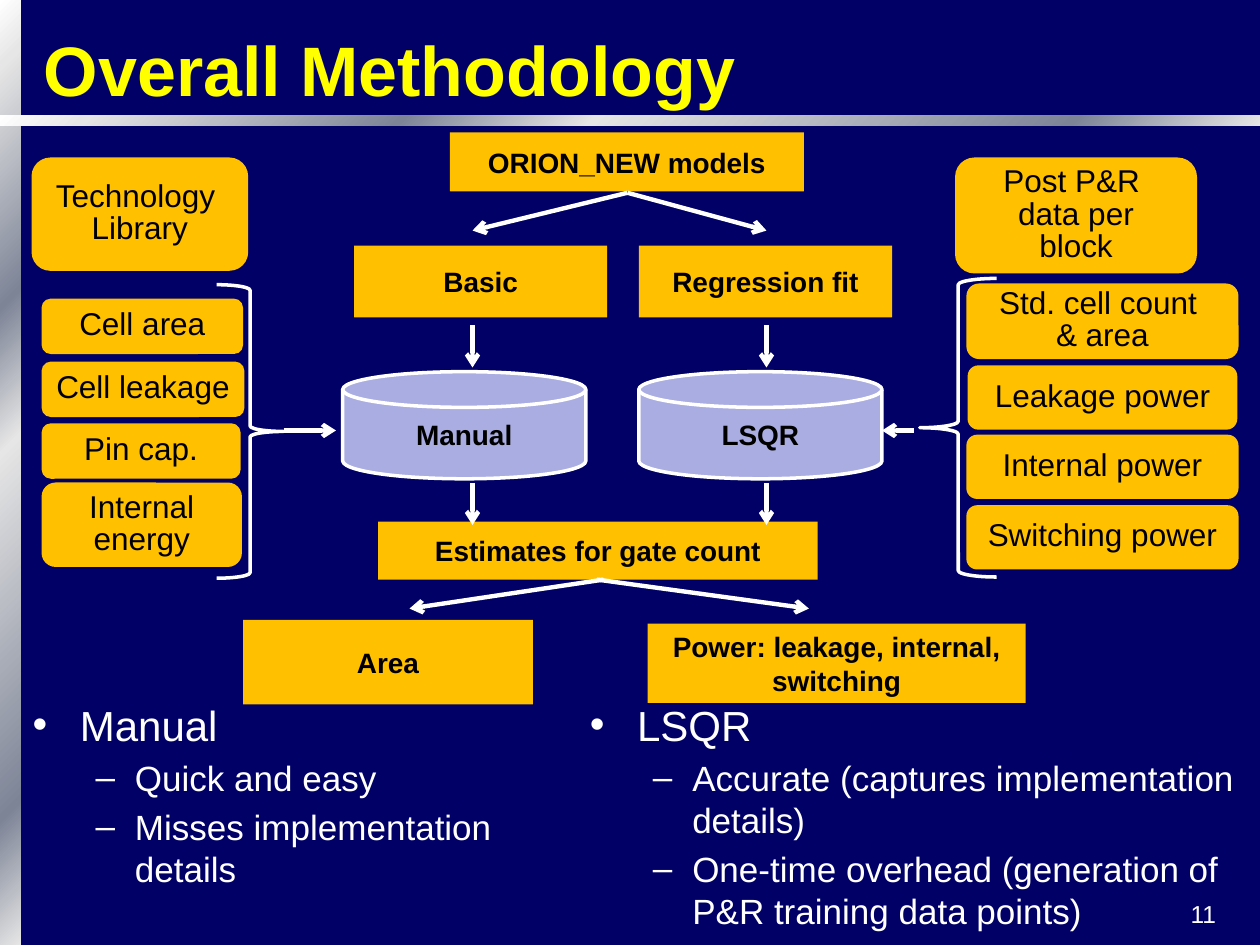
from dataclasses import dataclass

from lxml import etree
from pptx import Presentation
from pptx.dml.color import RGBColor
from pptx.enum.shapes import MSO_CONNECTOR, MSO_SHAPE
from pptx.enum.text import MSO_ANCHOR, PP_ALIGN
from pptx.oxml.ns import qn
from pptx.util import Inches, Pt

RECT, CARD = MSO_SHAPE.RECTANGLE, MSO_SHAPE.ROUNDED_RECTANGLE
DISK = MSO_SHAPE.FLOWCHART_MAGNETIC_DISK
LEFT_BRACE, RIGHT_BRACE = MSO_SHAPE.LEFT_BRACE, MSO_SHAPE.RIGHT_BRACE
STRAIGHT = MSO_CONNECTOR.STRAIGHT
TOP, MIDDLE = MSO_ANCHOR.TOP, MSO_ANCHOR.MIDDLE
LEFT, CENTER, RIGHT = PP_ALIGN.LEFT, PP_ALIGN.CENTER, PP_ALIGN.RIGHT

WIDTH, HEIGHT = Inches(10), Inches(7.5)
COLS, ROWS = 120, 90


@dataclass(frozen=True)
class Theme:
    font: str = "Arial"
    background: str = "000066"
    title: str = "FFFF00"
    light: str = "FFFFFF"
    dark: str = "000000"
    block: str = "FFC000"
    disk: str = "AAADE2"
    metal: tuple = ((0, "FFFFFF"), (7, "E6E6E6"), (32, "7D8496"),
                    (47, "E6E6E6"), (85, "7D8496"), (100, "E6E6E6"))
    title_size: int = 40
    topic_size: int = 24
    point_size: int = 20
    card_size: int = 18
    flow_size: int = 16
    number_size: int = 14
    outline: float = 2
    arrow: float = 2.5


T = Theme()


@dataclass(frozen=True)
class Box:
    x: float
    y: float
    w: float
    h: float

    def inner(self, x, y, w, h):
        return Box(self.x + x, self.y + y, w, h)

    def emu(self):
        return (across(self.x), down(self.y), across(self.w), down(self.h))


def across(cols):
    return int(WIDTH * cols / COLS)


def down(rows):
    return int(HEIGHT * rows / ROWS)


def rgb(value):
    return RGBColor.from_string(value)


def write(sp, lines, size, color, bold=False, align=CENTER, anchor=MIDDLE,
          spacing=None, wrap=True):
    tf = sp.text_frame
    tf.text = "\n".join(lines)
    tf.word_wrap = wrap
    tf.vertical_anchor = anchor
    for p in tf.paragraphs:
        p.alignment = align
        p.line_spacing = spacing
        for r in p.runs:
            r.font.name, r.font.size, r.font.bold = T.font, Pt(size), bold
            r.font.color.rgb = rgb(color)
    return tf


def add_shape(s, kind, box, fill=None, line=None):
    sp = s.shapes.add_shape(kind, *box.emu())
    sp.shadow.inherit = False
    if fill:
        sp.fill.solid()
        sp.fill.fore_color.rgb = rgb(fill)
    else:
        sp.fill.background()
    if line:
        sp.line.color.rgb, sp.line.width = rgb(line), Pt(T.outline)
    else:
        sp.line.fill.background()
    return sp


def add_arrow(s, box, x1, y1, x2, y2):
    c = s.shapes.add_connector(STRAIGHT, across(box.x + x1), down(box.y + y1),
                               across(box.x + x2), down(box.y + y2))
    c.line.color.rgb, c.line.width = rgb(T.light), Pt(T.arrow)
    spPr = c._element.spPr
    etree.SubElement(spPr.find(qn("a:ln")), qn("a:tailEnd"), type="arrow")
    etree.SubElement(spPr, qn("a:effectLst"))


def add_metal_bar(s, box):
    sp = add_shape(s, RECT, box)
    spPr = sp._element.spPr
    grad = etree.Element(qn("a:gradFill"), rotWithShape="1")
    stops = etree.SubElement(grad, qn("a:gsLst"))
    for pos, color in T.metal:
        gs = etree.SubElement(stops, qn("a:gs"), pos=str(pos * 1000))
        etree.SubElement(gs, qn("a:srgbClr"), val=color)
    etree.SubElement(grad, qn("a:lin"), ang=str(45 * 60000), scaled="0")
    spPr.replace(spPr.find(qn("a:noFill")), grad)


def add_frame(s, box):
    add_metal_bar(s, box.inner(0, 0, 2, box.h))
    add_metal_bar(s, box.inner(0, 11, box.w, 1))
    title = s.shapes.add_textbox(*box.inner(3, 1, 114, 11).emu())
    write(title, ["Overall Methodology"], T.title_size, T.title, True, LEFT)
    number = s.shapes.add_textbox(*box.inner(92, 85, 25, 3).emu())
    write(number, ["11"], T.number_size, T.light, align=RIGHT, anchor=TOP)


def add_flow(s, box):
    blocks = (
        ("ORION_NEW models", 19.84, 0, 33.72, 5.64),
        ("Basic", 10.72, 10.8, 24.12, 6.84),
        ("Regression fit", 37.84, 10.8, 24.12, 6.84),
        ("Estimates for gate count", 13, 37.08, 41.88, 5.52),
        ("Area", 0.16, 46.44, 27.6, 8.04),
        ("Power: leakage, internal, switching", 38.68, 46.8, 36, 7.56),
    )
    for text, *place in blocks:
        sp = add_shape(s, RECT, box.inner(*place), T.block)
        write(sp, [text], T.flow_size, T.dark, True)
    for text, x in (("Manual", 9.64), ("LSQR", 37.84)):
        sp = add_shape(s, DISK, box.inner(x, 22.8, 23.16, 10.2), T.disk, T.light)
        write(sp, [text], T.flow_size, T.dark, True)
    for x in (22, 50):
        add_arrow(s, box, 36.76, 5.76, x, 9.36)
        for y in (18.4, 33.4):
            add_arrow(s, box, x, y, x, y + 4)
    add_arrow(s, box, 34.48, 42.6, 16, 45.36)
    add_arrow(s, box, 33.88, 42.6, 54.04, 45.36)


def add_inputs(s, box, header, header_place, header_aligns, cards, brace,
               brace_place, arrow):
    sp = add_shape(s, CARD, box.inner(*header_place), T.block)
    tf = write(sp, header, T.card_size, T.dark, spacing=0.85)
    tf.margin_left = tf.margin_right = across(1.8)
    for p, align in zip(tf.paragraphs, header_aligns):
        p.alignment = align
    for lines, *place in cards:
        sp = add_shape(s, CARD, box.inner(*place), T.block)
        write(sp, lines, T.card_size, T.dark, spacing=0.85, wrap=False)
    add_shape(s, brace, box.inner(*brace_place), line=T.light)
    add_arrow(s, box, *arrow)


def add_bullets(s, box, topic, points):
    sp = s.shapes.add_textbox(*box.emu())
    tf = write(sp, [topic, *points], T.point_size, T.light, align=LEFT, anchor=TOP)
    for i, p in enumerate(tf.paragraphs):
        size = T.point_size if i else T.topic_size
        margin, hang, mark = (9.75, 3.75, "–") if i else (4.5, 4.5, "•")
        p.level = 1 if i else 0
        p.space_before = Pt(size * 0.2)
        p.runs[0].font.size = Pt(size)
        pPr = p._p.get_or_add_pPr()
        pPr.set("marL", str(across(margin)))
        pPr.set("indent", str(-across(hang)))
        etree.SubElement(pPr, qn("a:buFont"), typeface=T.font)
        etree.SubElement(pPr, qn("a:buChar"), char=mark)


def main():
    prs = Presentation()
    prs.slide_width, prs.slide_height = WIDTH, HEIGHT
    s = prs.slides.add_slide(prs.slide_layouts[6])
    s.background.fill.solid()
    s.background.fill.fore_color.rgb = rgb(T.background)

    add_frame(s, Box(0, 0, COLS, ROWS))
    add_flow(s, Box(23, 12.6, 75, 55))
    add_inputs(
        s, Box(3, 15, 29, 40),
        ["Technology", "Library"], (0, 0, 20.64, 10.8), (LEFT, CENTER),
        ((["Cell area"], 0.96, 13.44, 19.2, 5.28),
         (["Cell leakage"], 0.96, 19.44, 19.32, 5.28),
         (["Pin cap."], 0.96, 25.32, 18.96, 5.28),
         (["Internal", "energy"], 0.96, 30.96, 19.08, 8.04)),
        RIGHT_BRACE, (17.64, 12.12, 6.36, 27.96), (24, 26, 29, 26))
    add_inputs(
        s, Box(84, 15, 34, 40),
        ["Post P&R ", "data per block"], (6.96, 0, 23.04, 11.04), (CENTER, CENTER),
        ((["Std. cell count ", "& area"], 8.04, 12, 25.92, 7.2),
         (["Leakage power"], 8.16, 19.8, 25.68, 6.12),
         (["Internal power"], 8.04, 26.4, 25.92, 6.12),
         (["Switching power"], 8.04, 33.12, 25.92, 6.12)),
        LEFT_BRACE, (3.6, 11.52, 7.32, 28.44), (3, 26, 0, 26))
    add_bullets(s, Box(1.92, 66, 53.04, 20), "Manual",
                ["Quick and easy", "Misses implementation details"])
    add_bullets(s, Box(55, 66, 65, 16.4), "LSQR",
                ["Accurate (captures implementation details)",
                 "One-time overhead (generation of P&R training data points)"])
    prs.save("out.pptx")


if __name__ == "__main__":
    main()
